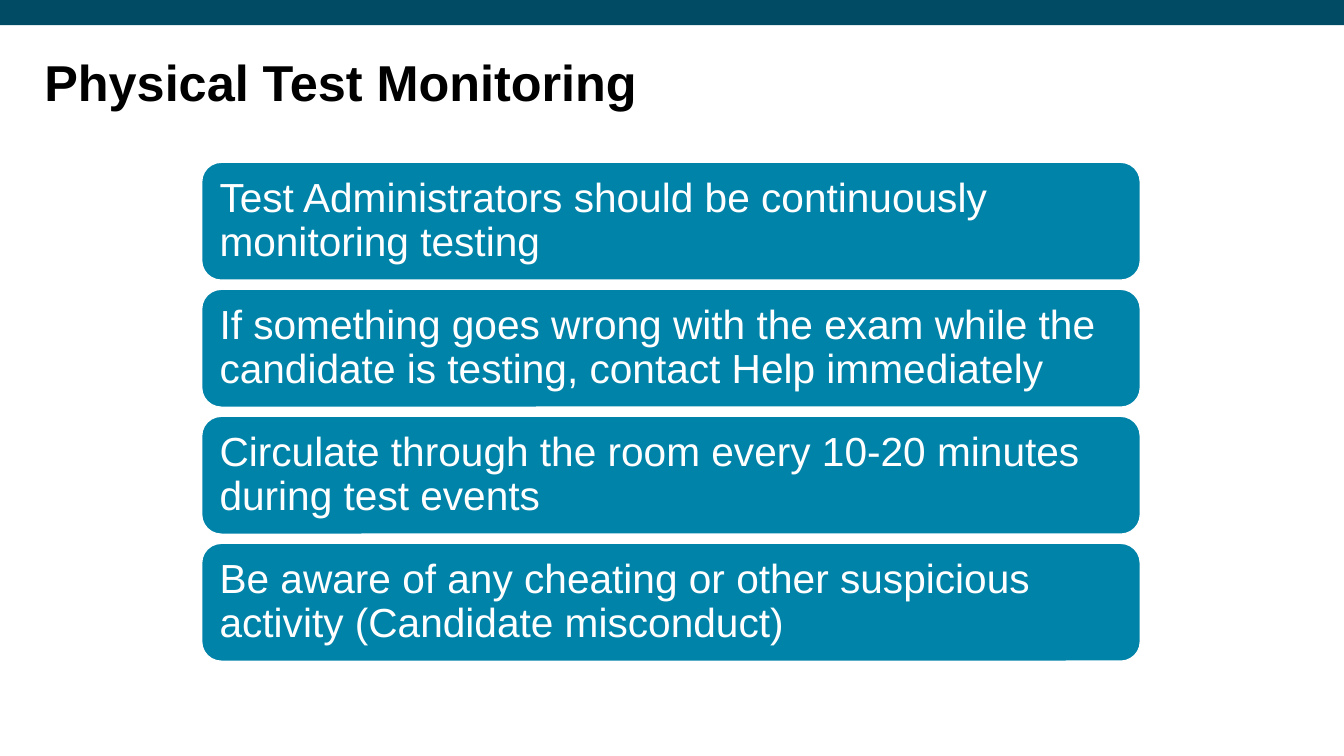
from pptx import Presentation
from pptx.dml.color import RGBColor
from pptx.enum import shapes, text
from pptx.util import Inches, Pt

COLORS = {"band": "014B64", "card": "0083A9", "white": "FFFFFF", "title": "000000"}
FONT = "Arial"
CARD_LEFT, CARD_TOP, CARD_WIDTH, CARD_HEIGHT = 2, 1.61, 9.31, 1.17
CARD_PITCH = 1.26
GUIDELINES = [
    "Test Administrators should be continuously monitoring testing\u00a0",
    "If\u00a0something goes wrong with the exam while the candidate is testing, "
    "contact Help immediately",
    "Circulate through the room every 10-20 minutes during test events",
    "Be aware of any cheating or other suspicious activity (Candidate misconduct)",
]


def rgb(name):
    return RGBColor.from_string(COLORS[name])


def set_text(sp, content, size, color, inset, anchor, bold=False):
    tf = sp.text_frame
    tf.word_wrap = True
    tf.vertical_anchor = anchor
    tf.margin_left = tf.margin_right = Inches(inset)
    tf.margin_top = tf.margin_bottom = Inches(inset)
    p = tf.paragraphs[0]
    p.text = content
    p.alignment = text.PP_ALIGN.LEFT
    p.line_spacing = 0.9
    p.font.name = FONT
    p.font.size = Pt(size)
    p.font.bold = bold
    p.font.color.rgb = rgb(color)


def add_box(s, preset, left, top, width, height, fill):
    sp = s.shapes.add_shape(preset, Inches(left), Inches(top), Inches(width), Inches(height))
    sp.shadow.inherit = False
    sp.fill.solid()
    sp.fill.fore_color.rgb = rgb(fill)
    sp.line.fill.background()
    return sp


def add_title(s, content):
    sp = s.shapes.add_textbox(Inches(0.44), Inches(0.58), Inches(12.41), Inches(1.27))
    set_text(sp, content, 36, "title", 0, text.MSO_ANCHOR.TOP, bold=True)


def add_card(s, top, content):
    sp = add_box(s, shapes.MSO_SHAPE.ROUNDED_RECTANGLE,
                 CARD_LEFT, top, CARD_WIDTH, CARD_HEIGHT, "card")
    sp.line.color.rgb = rgb("white")
    sp.line.width = Pt(1)
    set_text(sp, content, 29, "white", 0.12, text.MSO_ANCHOR.MIDDLE)


def main():
    prs = Presentation()
    prs.slide_width, prs.slide_height = Inches(13.33), Inches(7.5)
    s = prs.slides.add_slide(prs.slide_layouts[6])
    add_box(s, shapes.MSO_SHAPE.RECTANGLE, 0, 0, 13.33, 0.25, "band")
    add_title(s, "Physical Test Monitoring")
    for i, guideline in enumerate(GUIDELINES):
        add_card(s, CARD_TOP + i * CARD_PITCH, guideline)
    prs.save("out.pptx")


if __name__ == "__main__":
    main()
